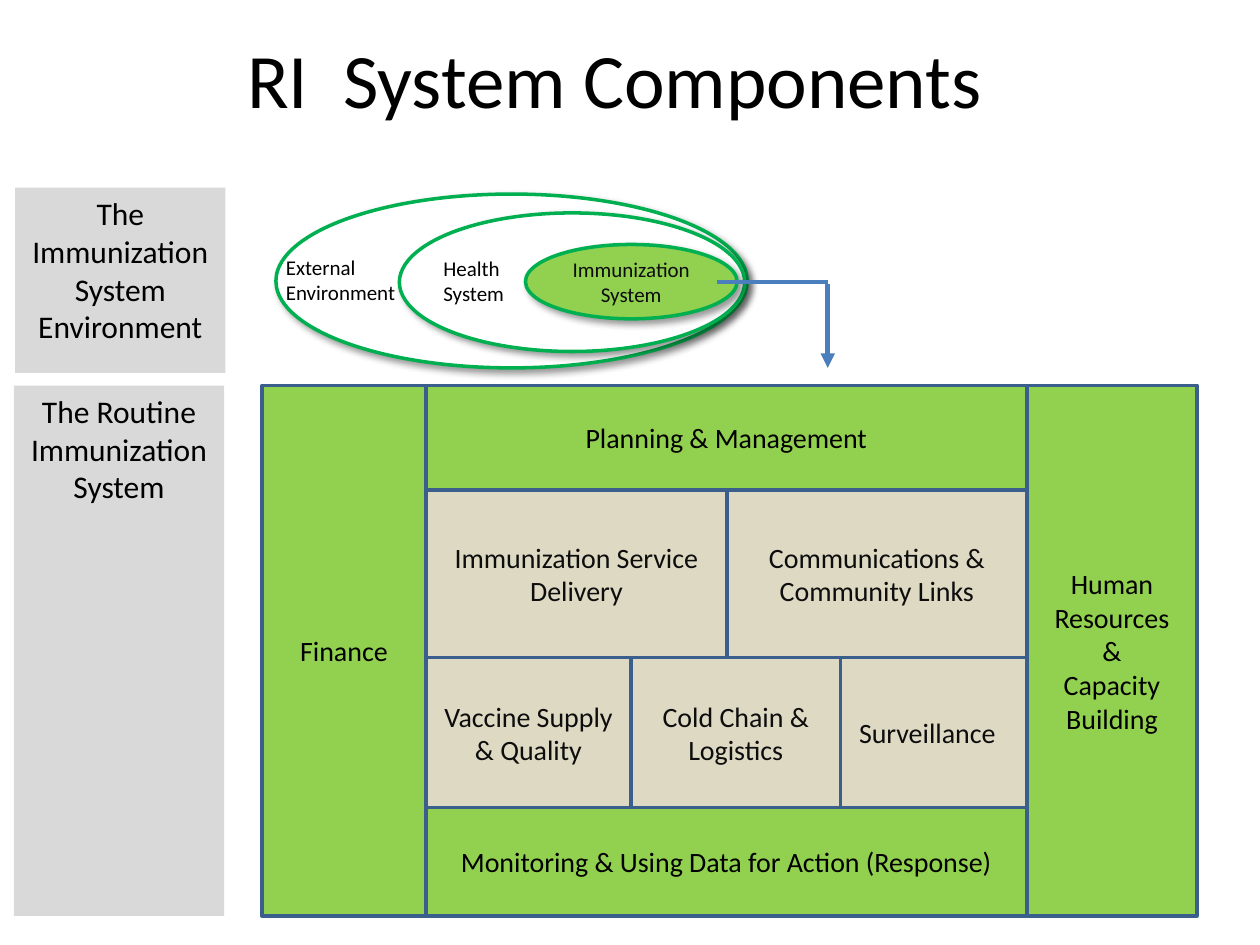
import lxml.etree
import pptx
import pptx.dml.color
import pptx.enum.shapes
import pptx.enum.text
import pptx.oxml
import pptx.oxml.ns
import pptx.util
from pptx.util import Inches

COLORS = {
    "black": "000000",
    "ink": "0D0D0D",
    "white": "FFFFFF",
    "gray": "D9D9D9",
    "lime": "92D050",
    "green": "00B050",
    "tan": "DDD9C3",
    "border": "3A5F8C",
    "arrow": "4B7EBC",
}
ALIGN = pptx.enum.text.PP_ALIGN
ANCHOR = pptx.enum.text.MSO_ANCHOR
SHAPE = pptx.enum.shapes.MSO_SHAPE
qn = pptx.oxml.ns.qn


class SlideBuilder:
    font = "Calibri"

    def __init__(self, slide):
        self.slide = slide

    def color(self, name):
        return pptx.dml.color.RGBColor.from_string(COLORS[name])

    def set_text(self, shape, text, size, color="black", align=ALIGN.CENTER, anchor=ANCHOR.MIDDLE):
        frame = shape.text_frame
        frame.text = text
        frame.word_wrap = True
        frame.vertical_anchor = anchor
        for paragraph in frame.paragraphs:
            paragraph.alignment = align
            for run in paragraph.runs:
                run.font.name = self.font
                run.font.size = pptx.util.Pt(size)
                run.font.color.rgb = self.color(color)

    def title(self, text, left, top, width, height):
        title = self.slide.shapes.title
        title.left, title.top = Inches(left), Inches(top)
        title.width, title.height = Inches(width), Inches(height)
        self.set_text(title, text, 44)

    def shape(self, kind, left, top, width, height, fill, line=None):
        shape = self.slide.shapes.add_shape(
            kind, Inches(left), Inches(top), Inches(width), Inches(height)
        )
        shape.shadow.inherit = False
        shape.fill.solid()
        shape.fill.fore_color.rgb = self.color(fill)
        if line:
            shape.line.color.rgb = self.color(line)
            shape.line.width = pptx.util.Pt(2)
        else:
            shape.line.fill.background()
        return shape

    def ellipse(self, left, top, width, height, fill):
        ellipse = self.shape(SHAPE.OVAL, left, top, width, height, fill, "green")
        effects = ellipse._element.spPr.find(qn("a:effectLst"))
        shadow = lxml.etree.SubElement(
            effects, qn("a:outerShdw"), blurRad=str(pptx.util.Pt(4)),
            dist=str(pptx.util.Pt(3)), dir=str(45 * 60000), rotWithShape="0",
        )
        shade = lxml.etree.SubElement(shadow, qn("a:srgbClr"), val=COLORS["black"])
        lxml.etree.SubElement(shade, qn("a:alpha"), val="40000")
        return ellipse

    def component(self, text, left, top, right, bottom, fill, color="black"):
        box = self.shape(SHAPE.RECTANGLE, left, top, right - left, bottom - top, fill, "border")
        self.set_text(box, text, 16, color)

    def side_label(self, text, left, top, height):
        label = self.shape(SHAPE.RECTANGLE, left, top, 1.67, height, "gray")
        self.set_text(label, text, 18, anchor=ANCHOR.TOP)

    def caption(self, text, left, top, width):
        caption = self.slide.shapes.add_textbox(
            Inches(left), Inches(top), Inches(width), Inches(0.5)
        )
        self.set_text(caption, text, 12, align=ALIGN.LEFT, anchor=ANCHOR.TOP)

    def line(self, start, end, width, arrow=False):
        connector = self.slide.shapes.add_connector(
            pptx.enum.shapes.MSO_CONNECTOR.STRAIGHT, *map(Inches, start + end)
        )
        connector.line.color.rgb = self.color("arrow")
        connector.line.width = pptx.util.Pt(width)
        if arrow:
            outline = connector.line._get_or_add_ln()
            lxml.etree.SubElement(outline, qn("a:tailEnd"), type="triangle")
        lxml.etree.SubElement(connector._element.spPr, qn("a:effectLst"))


def main():
    presentation = pptx.Presentation()
    presentation.slide_width, presentation.slide_height = Inches(10), Inches(7.5)
    builder = SlideBuilder(presentation.slides.add_slide(presentation.slide_layouts[5]))
    builder.title("RI  System Components", 0.42, 0.08, 8.92, 1.08)

    builder.ellipse(2.19, 1.54, 3.74, 1.38, "white")
    builder.ellipse(3.17, 1.69, 2.74, 1.1, "white")
    immunization = builder.ellipse(4.17, 1.94, 1.68, 0.59, "lime")
    builder.set_text(immunization, "Immunization System", 12, "ink")
    builder.caption("Health System", 3.42, 1.98, 0.72)
    builder.caption("External\nEnvironment", 2.17, 1.97, 1.3)

    top, service, supply, monitoring, bottom = 3.06, 3.89, 5.22, 6.41, 7.27
    left, inner_left, middle, inner_right, right = 2.08, 3.38, 5.77, 8.15, 9.5
    builder.side_label("The Immunization System Environment", 0.12, 1.49, 1.47)
    builder.side_label("The Routine Immunization System", 0.11, top, bottom - top)

    for text, start, end, upper, lower in (
        ("Immunization Service Delivery", inner_left, middle, service, supply),
        ("Communications & Community Links", middle, inner_right, service, supply),
        ("Vaccine Supply & Quality", inner_left, 5.01, supply, monitoring),
        ("Surveillance", 6.57, inner_right, supply, monitoring),
        ("Cold Chain & Logistics", 5.01, 6.67, supply, monitoring),
    ):
        builder.component(text, start, upper, end, lower, "tan", "ink")

    for text, start, end, upper, lower in (
        ("Planning & Management", inner_left, inner_right, top, service),
        ("Monitoring & Using Data for Action (Response)", inner_left, inner_right, monitoring, bottom),
        ("Human Resources\n&\nCapacity Building", inner_right, right, top, bottom),
        ("Finance", left, inner_left, top, bottom),
    ):
        builder.component(text, start, upper, end, lower, "lime")

    builder.line((5.69, 2.24), (6.57, 2.24), 2.5)
    builder.line((6.57, 2.25), (6.57, 2.92), 2.75, arrow=True)
    presentation.save("out.pptx")


if __name__ == "__main__":
    main()
